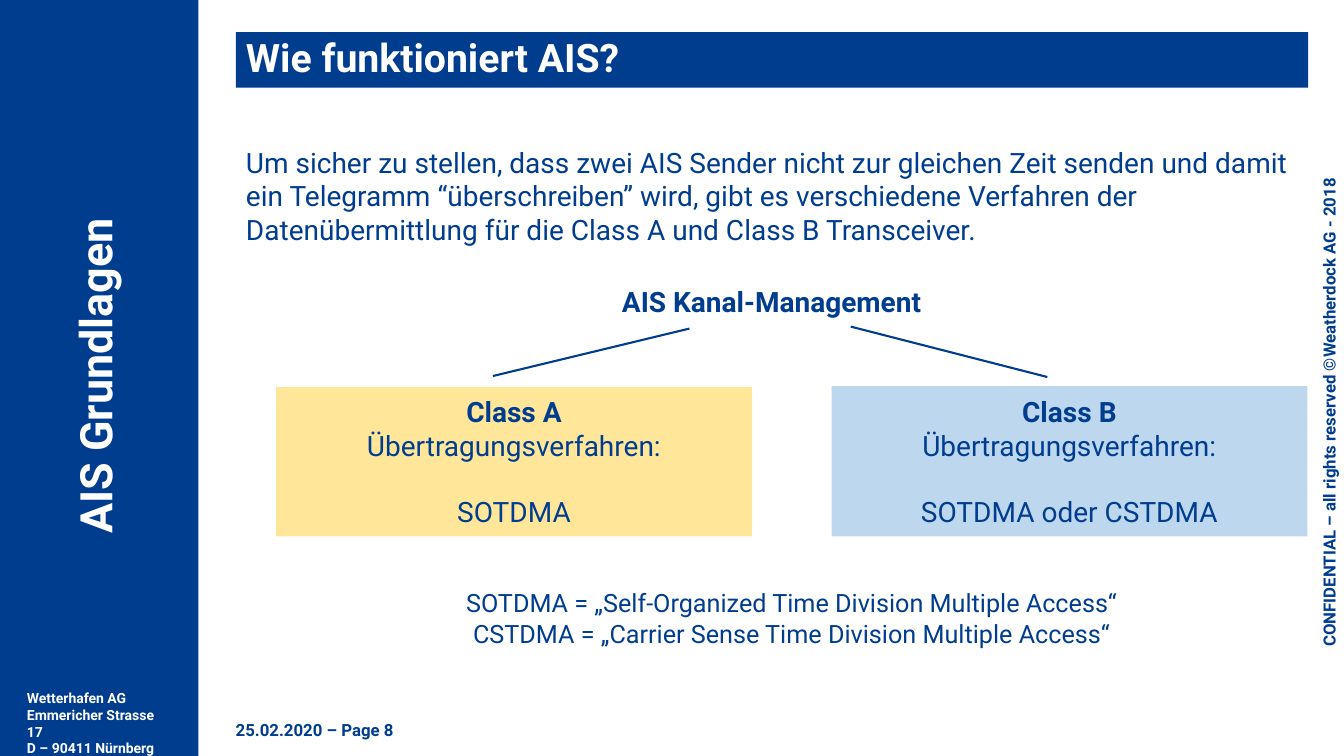
from lxml import etree
from pptx import Presentation
from pptx.dml.color import RGBColor
from pptx.enum.shapes import MSO_CONNECTOR, MSO_SHAPE
from pptx.enum.text import MSO_ANCHOR, MSO_AUTO_SIZE, PP_ALIGN
from pptx.oxml.ns import qn
from pptx.util import Pt

LEFT, CENTER = PP_ALIGN.LEFT, PP_ALIGN.CENTER
TOP, MIDDLE = MSO_ANCHOR.TOP, MSO_ANCHOR.MIDDLE
NO_AUTOFIT = MSO_AUTO_SIZE.NONE
RECTANGLE = MSO_SHAPE.RECTANGLE
STRAIGHT = MSO_CONNECTOR.STRAIGHT

COLORS = {
    "navy": "003D8F",
    "white": "FFFFFF",
    "yellow": "FFE699",
    "light_blue": "BDD7EE",
}
FONT = "Roboto"
BLANK_LINE = 23.4


def color(name):
    """Return the RGB color with the given name."""
    return RGBColor.from_string(COLORS[name])


def write_text(shape, lines, size=20, bold=False, ink="navy", align=LEFT,
               anchor=TOP, line_spacing=1.0, bold_lines=(), gap_before=()):
    """Write one formatted paragraph per line into a shape."""
    frame = shape.text_frame
    frame.word_wrap = True
    frame.auto_size = NO_AUTOFIT
    frame.vertical_anchor = anchor
    for index, line in enumerate(lines):
        paragraph = frame.add_paragraph() if index else frame.paragraphs[0]
        paragraph.alignment = align
        paragraph.line_spacing = line_spacing
        paragraph.space_before = Pt(BLANK_LINE if index in gap_before else 0)
        run = paragraph.add_run()
        run.text = line
        run.font.name = FONT
        run.font.size = Pt(size)
        run.font.bold = bold or index in bold_lines
        run.font.color.rgb = color(ink)


class SlideBuilder:
    """Hold the style and the current slide."""

    def __init__(self, presentation):
        """Add a title and content slide."""
        self.slide = presentation.slides.add_slide(presentation.slide_layouts[1])

    def place(self, shape, box):
        """Move and size a shape."""
        shape.left, shape.top, shape.width, shape.height = map(Pt, box)

    def title(self, text, box):
        """Fill the title placeholder as a colored bar."""
        shape = self.slide.shapes.title
        self.place(shape, box)
        shape.fill.solid()
        shape.fill.fore_color.rgb = color("navy")
        write_text(shape, [text], size=28, bold=True, ink="white",
                   anchor=MIDDLE, line_spacing=0.9)

    def body(self, text, box):
        """Fill the body placeholder with a paragraph without bullet."""
        shape = self.slide.placeholders[1]
        self.place(shape, box)
        properties = shape.text_frame.paragraphs[0]._p.get_or_add_pPr()
        properties.set("marL", "0")
        properties.set("indent", "0")
        etree.SubElement(properties, qn("a:buNone"))
        write_text(shape, [text])

    def panel(self, box, fill, lines=(), **text_format):
        """Add a filled rectangle with optional text."""
        shape = self.slide.shapes.add_shape(RECTANGLE, *map(Pt, box))
        shape.shadow.inherit = False
        shape.fill.solid()
        shape.fill.fore_color.rgb = color(fill)
        shape.line.fill.background()
        write_text(shape, lines, **text_format)

    def label(self, box, lines, rotation=0, **text_format):
        """Add a text box."""
        shape = self.slide.shapes.add_textbox(*map(Pt, box))
        shape.rotation = rotation
        write_text(shape, lines, **text_format)

    def branch(self, start, end):
        """Add a straight line."""
        connector = self.slide.shapes.add_connector(STRAIGHT, *map(Pt, start + end))
        connector.line.color.rgb = color("navy")
        connector.line.width = Pt(1.5)
        etree.SubElement(connector._element.spPr, qn("a:effectLst"))


def main():
    """Build and save the slide."""
    presentation = Presentation()
    presentation.slide_width, presentation.slide_height = Pt(960), Pt(540)
    builder = SlideBuilder(presentation)

    builder.panel((0, 0, 141.8, 540), "navy")
    builder.label((12.2, 488.9, 118.1, 43.9),
                  ["Wetterhafen AG", "Emmericher Strasse 17", "D – 90411 Nürnberg"],
                  size=10, bold=True, ink="white")
    builder.label((764.6, 273.6, 369.4, 21.6),
                  ["CONFIDENTIAL – all rights reserved ©Weatherdock AG - 2018"],
                  rotation=270, size=12, bold=True)
    builder.label((-109.4, 245.5, 354.2, 46), ["AIS Grundlagen"],
                  rotation=270, size=32, bold=True, ink="white", align=CENTER)
    builder.label((161.3, 510.5, 216, 28.8), ["25.02.2020 – Page 8"],
                  size=12, bold=True)

    builder.title("Wie funktioniert AIS?", (168.5, 23, 766, 39.6))
    builder.body("Um sicher zu stellen, dass zwei AIS Sender nicht zur gleichen Zeit "
                 "senden und damit ein Telegramm “überschreiben” wird, gibt es "
                 "verschiedene Verfahren der Datenübermittlung für die Class A und "
                 "Class B Transceiver.", (168.5, 100, 766, 89.3))

    builder.label((168.5, 199.4, 765.4, 31.7), ["AIS Kanal-Management"],
                  bold=True, align=CENTER)
    builder.branch((492.5, 234.7), (352.1, 268.6))
    builder.branch((607.7, 233.3), (748.1, 269.3))
    for left, top, height, fill, name, method in (
        (197.3, 276.5, 106.6, "yellow", "Class A", "SOTDMA"),
        (594, 275.8, 107.3, "light_blue", "Class B", "SOTDMA oder CSTDMA"),
    ):
        builder.panel((left, top, 339.8, height), fill,
                      [name, "Übertragungsverfahren:", method],
                      align=CENTER, anchor=MIDDLE, bold_lines=(0,), gap_before=(2,))

    builder.label((197.3, 416.2, 736.6, 51.1),
                  ["SOTDMA = „Self-Organized Time Division Multiple Access“",
                   "CSTDMA = „Carrier Sense Time Division Multiple Access“"],
                  size=18, align=CENTER)
    presentation.save("out.pptx")


if __name__ == "__main__":
    main()
